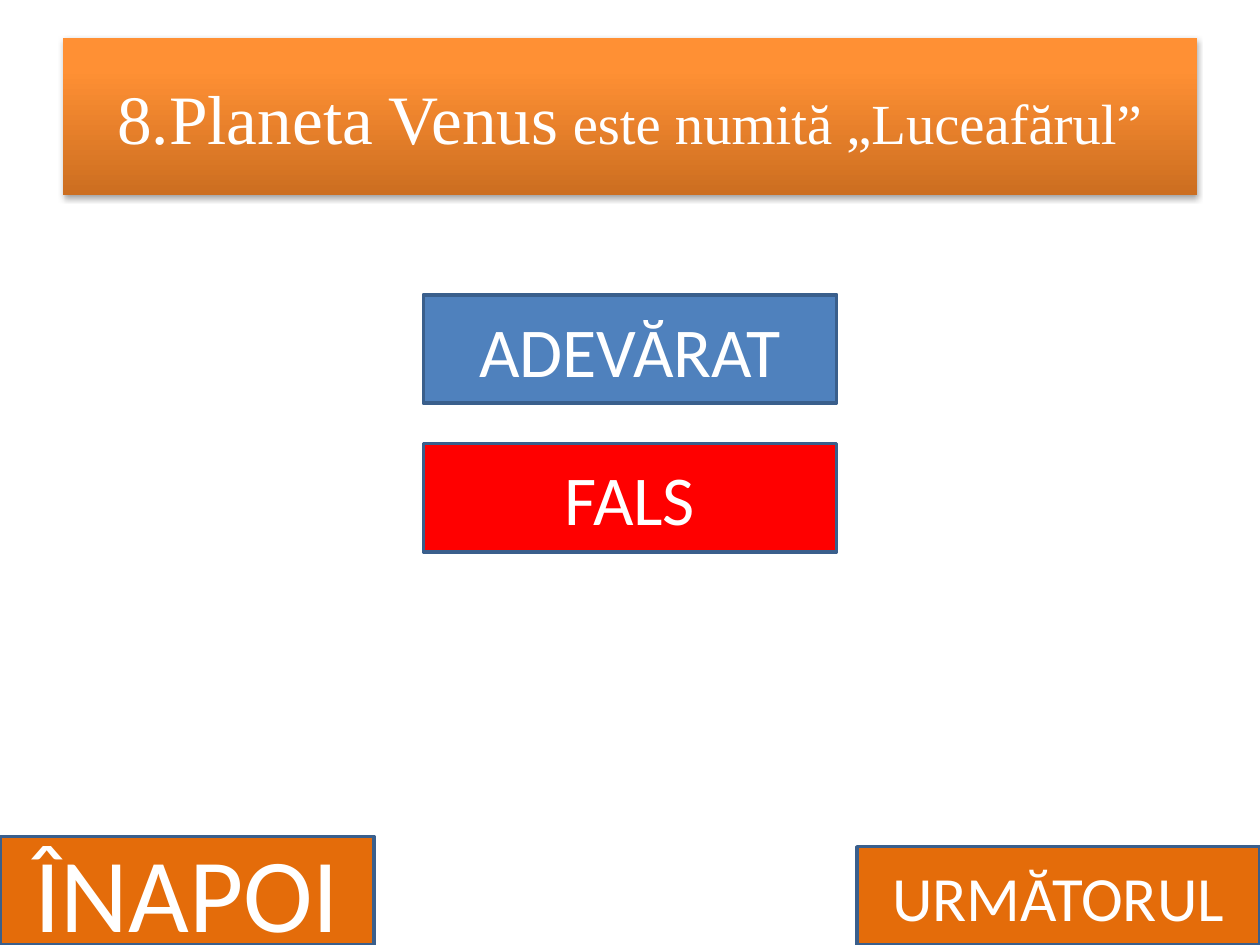
import copy

import pptx
import pptx.dml.color
import pptx.enum.shapes
import pptx.enum.text
import pptx.oxml
import pptx.oxml.ns
import pptx.util

Inches = pptx.util.Inches
Pt = pptx.util.Pt
RGBColor = pptx.dml.color.RGBColor
MSO_SHAPE = pptx.enum.shapes.MSO_SHAPE

WHITE = RGBColor(0xFF, 0xFF, 0xFF)
BLUE = RGBColor(0x4F, 0x81, 0xBD)
RED = RGBColor(0xFF, 0x00, 0x00)
ORANGE = RGBColor(0xE4, 0x6C, 0x0A)
OUTLINE = RGBColor(0x3A, 0x5F, 0x8C)
TITLE_STOPS = [
    (0, RGBColor(0xCC, 0x6E, 0x20)),
    (0.8, RGBColor(0xFF, 0x90, 0x34)),
    (1, RGBColor(0xFF, 0x91, 0x36)),
]

WIDTH, HEIGHT = 10, 7.5
TITLE_BOX = (0.5, 0.3, 9, 1.25)
TITLE_RUNS = [("8.Planeta Venus", 39.6), (" este numită „Luceafărul”", 32.4)]
ANSWERS = [("ADEVĂRAT", BLUE), ("FALS", RED)]
ANSWER_SIZE = (3.28, 0.86)
ANSWER_TOP, ANSWER_STEP = 2.34, 1.18
NEXT_SIZE = (3.2, 0.78)
BACK_SIZE = (2.97, 0.86)

SHADOW = (
    '<a:outerShdw %s blurRad="40000" dist="23000" dir="5400000" rotWithShape="0">'
    '<a:srgbClr val="000000"><a:alpha val="35000"/></a:srgbClr></a:outerShdw>'
    % pptx.oxml.ns.nsdecls("a")
)


def add_box(slide, kind, box, runs, font_name):
    shape = slide.shapes.add_shape(kind, *map(Inches, box))
    shape.shadow.inherit = False
    frame = shape.text_frame
    frame.word_wrap = True
    frame.vertical_anchor = pptx.enum.text.MSO_ANCHOR.MIDDLE
    paragraph = frame.paragraphs[0]
    paragraph.alignment = pptx.enum.text.PP_ALIGN.CENTER
    paragraph.font.name = font_name
    paragraph.font.color.rgb = WHITE
    for text, size in runs:
        run = paragraph.add_run()
        run.text = text
        run.font.name = font_name
        run.font.size = Pt(size)
        run.font.color.rgb = WHITE
    return shape


def add_title(slide):
    shape = add_box(slide, MSO_SHAPE.RECTANGLE, TITLE_BOX, TITLE_RUNS, "Times New Roman")
    shape.line.fill.background()
    shape.fill.gradient()
    shape.fill.gradient_angle = 90
    properties = shape._element.spPr
    stop_list = properties.find(".//" + pptx.oxml.ns.qn("a:gsLst"))
    stop_list.append(copy.deepcopy(stop_list[0]))
    for stop, (position, color) in zip(shape.fill.gradient_stops, TITLE_STOPS):
        stop.position = position
        stop.color.rgb = color
    effects = properties.find(pptx.oxml.ns.qn("a:effectLst"))
    effects.append(pptx.oxml.parse_xml(SHADOW))


def add_button(slide, left, top, size, text, font_size, color):
    box = (left, top, *size)
    shape = add_box(slide, MSO_SHAPE.ACTION_BUTTON_CUSTOM, box, [(text, font_size)], "Calibri")
    shape.fill.solid()
    shape.fill.fore_color.rgb = color
    shape.line.color.rgb = OUTLINE
    shape.line.width = Pt(2)


def main():
    presentation = pptx.Presentation()
    presentation.slide_width = Inches(WIDTH)
    presentation.slide_height = Inches(HEIGHT)
    slide = presentation.slides.add_slide(presentation.slide_layouts[6])

    add_title(slide)
    answer_left = (WIDTH - ANSWER_SIZE[0]) / 2
    for index, (text, color) in enumerate(ANSWERS):
        top = ANSWER_TOP + index * ANSWER_STEP
        add_button(slide, answer_left, top, ANSWER_SIZE, text, 40, color)
    next_left = WIDTH - NEXT_SIZE[0]
    add_button(slide, next_left, HEIGHT - NEXT_SIZE[1], NEXT_SIZE, "URMĂTORUL", 36, ORANGE)
    add_button(slide, 0, HEIGHT - BACK_SIZE[1], BACK_SIZE, "ÎNAPOI", 60, ORANGE)

    presentation.save("out.pptx")


if __name__ == "__main__":
    main()
